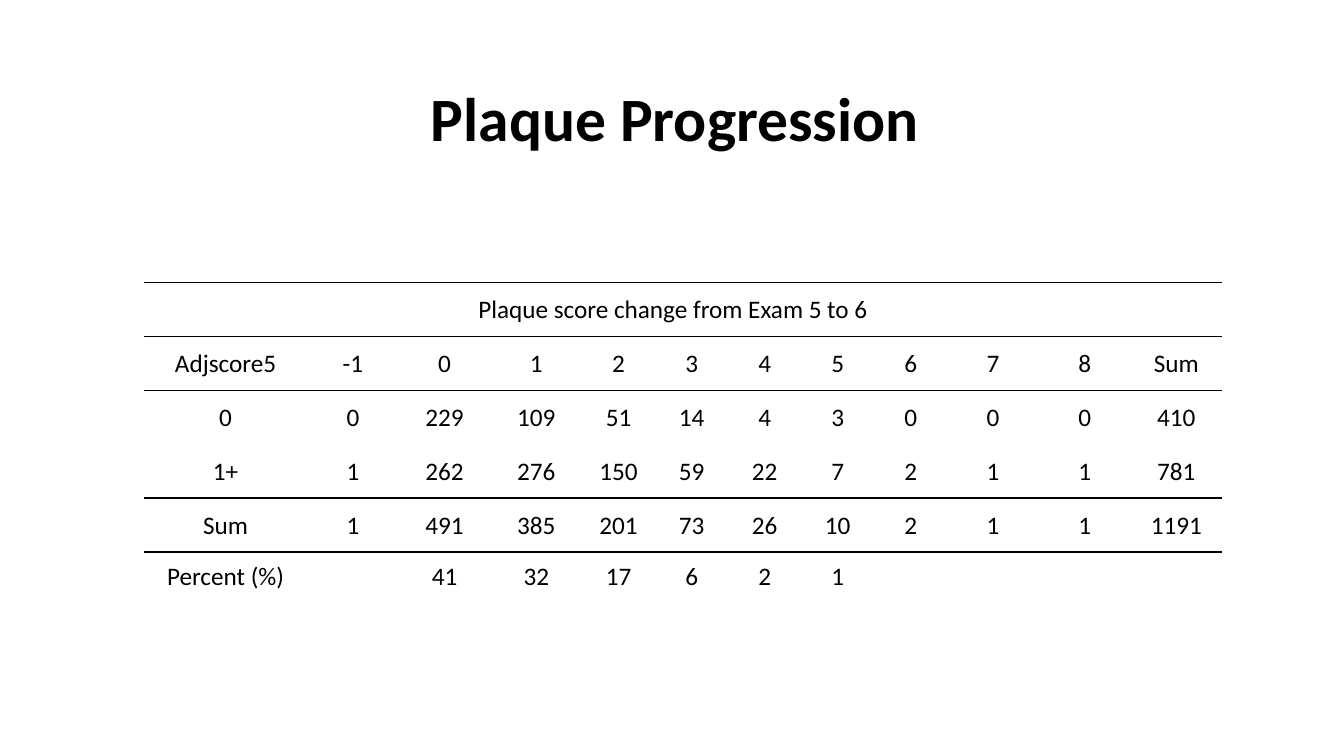
from lxml import etree
from pptx import Presentation
from pptx.dml.color import RGBColor
from pptx.enum.text import MSO_ANCHOR, PP_ALIGN
from pptx.oxml.ns import qn
from pptx.util import Cm, Pt

CENTER = PP_ALIGN.CENTER
TOP = MSO_ANCHOR.TOP
MIDDLE = MSO_ANCHOR.MIDDLE

TITLE = "Plaque Progression "
CAPTION = "Plaque score change from Exam 5 to 6"
SCORES = [
    ("Adjscore5", "-1", "0", "1", "2", "3", "4", "5", "6", "7", "8", "Sum"),
    ("0", "0", "229", "109", "51", "14", "4", "3", "0", "0", "0", "410"),
    ("1+", "1", "262", "276", "150", "59", "22", "7", "2", "1", "1", "781"),
    ("Sum", "1", "491", "385", "201", "73", "26", "10", "2", "1", "1", "1191"),
    ("Percent (%)", "", "41", "32", "17", "6", "2", "1", "", "", "", ""),
]
COLORS = {"ink": "000000"}
FONT = "Calibri"
NO_STYLE = "{2D5ABB26-0587-4C30-8999-92F81FD0307C}"

LABEL, WIDE, NARROW = 4.11, 2.31, 1.84
COLUMN_WIDTHS = [LABEL] + [WIDE] * 3 + [NARROW] * 5 + [WIDE] * 3
ROW_HEIGHTS = [1.36] * 5 + [1.25]
CAPTION_COLUMNS = (2, 8)
RULES = {0: ("lnT", "lnB"), 1: ("lnT",), 3: ("lnB",), 4: ("lnT",)}


def write(frame, text, size, bold=False, spacing=1.0):
    paragraph = frame.paragraphs[0]
    paragraph.alignment = CENTER
    paragraph.line_spacing = spacing
    run = paragraph.add_run()
    run.text = text
    run.font.name = FONT
    run.font.size = Pt(size)
    run.font.bold = bold
    run.font.color.rgb = RGBColor.from_string(COLORS["ink"])


def rule_cell(cell, sides):
    properties = cell._tc.get_or_add_tcPr()
    for position, side in enumerate(sides):
        line = etree.Element(qn(f"a:{side}"), w=str(Pt(1)))
        fill = etree.SubElement(line, qn("a:solidFill"))
        etree.SubElement(fill, qn("a:srgbClr"), val=COLORS["ink"])
        properties.insert(position, line)


def add_title(slide):
    title = slide.shapes.add_textbox(Cm(6.4), Cm(2.11), Cm(21.59), Cm(3.18))
    title.text_frame.word_wrap = True
    title.text_frame.vertical_anchor = TOP
    write(title.text_frame, TITLE, 44, bold=True, spacing=0.9)


def add_scores(slide):
    first, last = CAPTION_COLUMNS
    count = len(COLUMN_WIDTHS)
    caption_row = [CAPTION if column == first else "" for column in range(count)]
    rows = [caption_row, *SCORES]
    table = slide.shapes.add_table(
        len(rows), count, Cm(3.63), Cm(7.11),
        Cm(sum(COLUMN_WIDTHS)), Cm(sum(ROW_HEIGHTS)),
    ).table
    table.first_row = False
    table.horz_banding = False
    table._tbl.tblPr.find(qn("a:tableStyleId")).text = NO_STYLE
    for column, width in zip(table.columns, COLUMN_WIDTHS):
        column.width = Cm(width)
    for row, height in zip(table.rows, ROW_HEIGHTS):
        row.height = Cm(height)
    table.cell(0, first).merge(table.cell(0, last))
    for r, values in enumerate(rows):
        for c, value in enumerate(values):
            cell = table.cell(r, c)
            cell.fill.background()
            cell.vertical_anchor = MIDDLE
            cell.margin_left = cell.margin_right = cell.margin_top = Cm(0.02)
            cell.margin_bottom = Cm(0)
            rule_cell(cell, RULES.get(r, ()))
            if value:
                write(cell.text_frame, value, 18)


def main():
    deck = Presentation()
    deck.slide_width = Cm(33.87)
    deck.slide_height = Cm(19.05)
    slide = deck.slides.add_slide(deck.slide_layouts[6])
    add_title(slide)
    add_scores(slide)
    deck.save("out.pptx")


if __name__ == "__main__":
    main()
